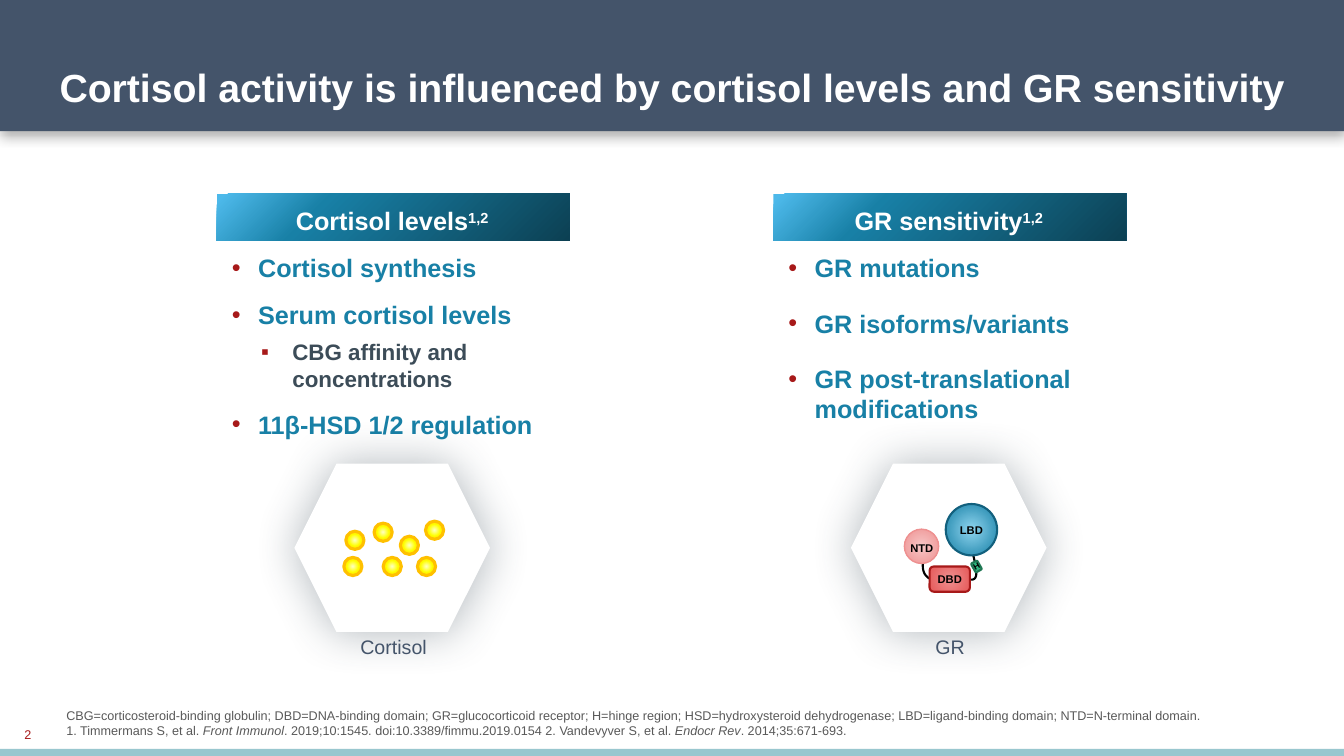
from dataclasses import dataclass

from lxml import etree
from pptx import Presentation
from pptx.dml.color import RGBColor
from pptx.enum import shapes, text
from pptx.oxml import ns
from pptx.util import Inches, Pt

FONT = "Arial"
SLATE = RGBColor(0x44, 0x54, 0x6A)
AQUA = RGBColor(0x99, 0xC7, 0xCF)
WHITE = RGBColor(0xFF, 0xFF, 0xFF)
BLACK = RGBColor(0x00, 0x00, 0x00)
RED = RGBColor(0xA7, 0x19, 0x19)
GRAY = RGBColor(0x59, 0x59, 0x59)
CHARCOAL = RGBColor(0x3C, 0x4C, 0x58)
SKY = RGBColor(0x4D, 0xB9, 0xEA)
TEAL = RGBColor(0x18, 0x80, 0xA6)
DEEP_TEAL = RGBColor(0x0C, 0x40, 0x53)
PALE_BLUE = RGBColor(0x8F, 0xD5, 0xEF)
DARK_TEAL = RGBColor(0x12, 0x60, 0x7D)
PALE_PINK = RGBColor(0xF7, 0xC8, 0xC8)
PINK = RGBColor(0xEE, 0x90, 0x90)
CORAL = RGBColor(0xE6, 0x59, 0x59)
GREEN = RGBColor(0x2F, 0xB7, 0x80)
DARK_GREEN = RGBColor(0x1F, 0x77, 0x53)
CREAM = RGBColor(0xFF, 0xFF, 0xBD)
YELLOW = RGBColor(0xFF, 0xFF, 0x00)
AMBER = RGBColor(0xFF, 0xC0, 0x00)

BAR_STOPS = [(2, SKY), (29, TEAL), (100, DEEP_TEAL)]
CORTISOL_STOPS = [(0, CREAM), (45, YELLOW), (96, AMBER)]


@dataclass
class Run:
    text: str
    italic: bool = False
    superscript: bool = False


@dataclass
class Bullet:
    text: str
    before: float = 12
    sub: bool = False


@dataclass
class Column:
    left: float
    heading: str
    bullets: list[Bullet]
    height: float
    caption: str
    caption_width: float


@dataclass
class Domain:
    kind: shapes.MSO_SHAPE
    box: tuple[float, float, float, float]
    fill: RGBColor | list
    line: RGBColor
    weight: float = 1.5
    label: str = ""
    size: float = 8
    rotation: float = 0


COLUMNS = [
    Column(2.15, "Cortisol levels", [
        Bullet("Cortisol synthesis"), Bullet("Serum cortisol levels"),
        Bullet("CBG affinity and concentrations", 6, True),
        Bullet("11β-HSD 1/2 regulation")], 2.44, "Cortisol", 0.87),
    Column(7.67, "GR sensitivity", [
        Bullet("GR mutations"), Bullet("GR isoforms/variants", 18),
        Bullet("GR post-translational modifications", 18)], 2.93, "GR", 0.5),
]
CORTISOL_SPOTS = [(3.43, 5.27), (3.8, 5.53), (3.41, 5.53), (4.22, 5.17),
                  (3.71, 5.19), (3.97, 5.32), (4.14, 5.53)]
DOMAINS = [
    Domain(shapes.MSO_SHAPE.OVAL, (9.38, 5, 0.51, 0.51),
           [(0, PALE_BLUE), (96, TEAL)], DARK_TEAL, label="LBD"),
    Domain(shapes.MSO_SHAPE.OVAL, (8.97, 5.25, 0.34, 0.34),
           [(0, PALE_PINK), (100, PINK)], PINK, 1),
    Domain(shapes.MSO_SHAPE.ROUNDED_RECTANGLE, (9.22, 5.62, 0.4, 0.25),
           [(0, PINK), (100, CORAL)], RED, label="DBD"),
    Domain(shapes.MSO_SHAPE.ROUNDED_RECTANGLE, (9.65, 5.57, 0.07, 0.1),
           GREEN, DARK_GREEN, label="H", size=6, rotation=330.6),
]


def sub_element(parent, tag: str, **attributes):
    names = {name: str(value) for name, value in attributes.items()}
    return etree.SubElement(parent, ns.qn(tag), names)


def write(frame, content: str | list[Run], *, size: float, color: RGBColor, bold=False,
          align=text.PP_ALIGN.LEFT, before: float = 0, spacing: float = 1,
          bullet: str = "", level: int = 0, margin: float = 0, hanging: float = 0) -> None:
    """Fill the frame's empty first paragraph, or add one after it."""
    first = frame.paragraphs[0]
    paragraph = frame.add_paragraph() if first.runs else first
    paragraph.alignment, paragraph.level = align, level
    paragraph.line_spacing, paragraph.space_before = spacing, Pt(before)
    properties = paragraph._p.get_or_add_pPr()
    properties.set("marL", str(Inches(margin)))
    properties.set("indent", str(-Inches(hanging)))
    if bullet:
        sub_element(sub_element(properties, "a:buClr"), "a:srgbClr", val=RED)
        sub_element(properties, "a:buFont", typeface=FONT)
        sub_element(properties, "a:buChar", char=bullet)
    else:
        sub_element(properties, "a:buNone")
    for part in [Run(content)] if isinstance(content, str) else content:
        run = paragraph.add_run()
        run.text = part.text
        font = run.font
        font.name, font.size, font.bold, font.italic = FONT, Pt(size), bold, part.italic
        font.color.rgb = color
        if part.superscript:
            font._element.set("baseline", "30000")


def set_gradient(shape, stops: list, angle: float | None = None) -> None:
    """Apply a linear gradient at the angle, or a radial one without it."""
    shape.fill.solid()
    solid = shape._element.spPr.find(ns.qn("a:solidFill"))
    gradient = etree.Element(ns.qn("a:gradFill"), rotWithShape="1")
    stop_list = sub_element(gradient, "a:gsLst")
    for position, color in stops:
        stop = sub_element(stop_list, "a:gs", pos=position * 1000)
        sub_element(stop, "a:srgbClr", val=color)
    if angle is None:
        circle = sub_element(gradient, "a:path", path="circle")
        sub_element(circle, "a:fillToRect", l=50000, t=50000, r=50000, b=50000)
    else:
        sub_element(gradient, "a:lin", ang=int(angle * 60000), scaled=0)
    solid.getparent().replace(solid, gradient)


def set_shadow(shape, color: RGBColor, alpha: int, blur: float, distance: float) -> None:
    effects = shape._element.spPr.find(ns.qn("a:effectLst"))
    shadow = sub_element(effects, "a:outerShdw", blurRad=Pt(blur), dist=Pt(distance),
                         dir=5400000, algn="ctr", rotWithShape=0)
    sub_element(sub_element(shadow, "a:srgbClr", val=color), "a:alpha", val=alpha * 1000)


def place(shape, left: float, top: float, width: float, height: float) -> None:
    shape.left, shape.top = Inches(left), Inches(top)
    shape.width, shape.height = Inches(width), Inches(height)


def add_shape(slide, kind, box, fill, line=None, weight: float = 1, angle=None):
    shape = slide.shapes.add_shape(kind, *map(Inches, box))
    shape.shadow.inherit = False
    if isinstance(fill, list):
        set_gradient(shape, fill, angle)
    else:
        shape.fill.solid()
        shape.fill.fore_color.rgb = fill
    if line is None:
        shape.line.fill.background()
    else:
        shape.line.color.rgb, shape.line.width = line, Pt(weight)
    return shape


def add_text_box(slide, box, wrap=True, anchor=text.MSO_ANCHOR.TOP):
    frame = slide.shapes.add_textbox(*map(Inches, box)).text_frame
    frame.word_wrap, frame.vertical_anchor = wrap, anchor
    return frame


def bring_forward(slide, placeholder, box, anchor):
    """Move the placeholder above everything drawn so far."""
    slide.shapes._spTree.append(placeholder._element)
    place(placeholder, *box)
    frame = placeholder.text_frame
    frame.auto_size, frame.word_wrap = text.MSO_AUTO_SIZE.NONE, True
    frame.vertical_anchor = anchor
    return frame


def add_column(slide, column: Column, body) -> None:
    left = column.left
    panel = add_shape(slide, shapes.MSO_SHAPE.SNIP_2_DIAG_RECTANGLE, (left, 1.92, 3.5, 4.64), WHITE)
    panel.adjustments[0], panel.adjustments[1] = 0.08, 0
    add_shape(slide, shapes.MSO_SHAPE.RECTANGLE, (left, 1.92, 3.5, 0.47), BAR_STOPS, angle=45)
    frame = bring_forward(slide, body, (left + 0.05, 1.99, 3.38, column.height), text.MSO_ANCHOR.TOP)
    write(frame, [Run(column.heading), Run("1,2", superscript=True)],
          size=18, color=WHITE, bold=True, align=text.PP_ALIGN.CENTER)
    for item in column.bullets:
        style = (dict(size=16, color=CHARCOAL, bullet="▪", level=1, margin=0.6, hanging=0.31)
                 if item.sub else
                 dict(size=18, color=TEAL, bullet="•", margin=0.26, hanging=0.26))
        write(frame, item.text, bold=True, before=item.before, **style)
    hexagon = add_shape(slide, shapes.MSO_SHAPE.HEXAGON, (left + 0.77, 4.6, 1.94, 1.67), WHITE)
    set_shadow(hexagon, CHARCOAL, 40, 33, 0)
    caption_left = left + 1.76 - column.caption_width / 2
    caption = add_text_box(slide, (caption_left, 6.25, column.caption_width, 0.34), wrap=False)
    write(caption, column.caption, size=14, color=SLATE)


def add_linker(slide, controls: list, rotation: float = 0) -> None:
    """Draw a cubic curve through its four control points."""
    steps = 16
    points = []
    for step in range(steps + 1):
        t = step / steps
        weights = ((1 - t) ** 3, 3 * t * (1 - t) ** 2, 3 * t * t * (1 - t), t ** 3)
        points.append(tuple(Inches(sum(w * c[axis] for w, c in zip(weights, controls)))
                            for axis in (0, 1)))
    builder = slide.shapes.build_freeform(*points[0])
    builder.add_line_segments(points[1:], close=False)
    linker = builder.convert_to_shape()
    linker.shadow.inherit = False
    linker.fill.background()
    linker.line.color.rgb, linker.line.width = BLACK, Pt(1.5)
    linker.rotation = rotation


def add_receptor(slide) -> None:
    add_linker(slide, [(9.17, 5.51), (9.14, 5.61), (9.14, 5.71), (9.24, 5.75)])
    add_linker(slide, [(9.62, 5.49), (9.73, 5.71), (9.73, 5.77), (9.59, 5.75)], 11.8)
    for domain in DOMAINS:
        shape = add_shape(slide, domain.kind, domain.box, domain.fill, domain.line, domain.weight)
        shape.rotation = domain.rotation
        if domain.label:
            frame = shape.text_frame
            frame.margin_left = frame.margin_right = 0
            frame.vertical_anchor = text.MSO_ANCHOR.MIDDLE
            write(frame, domain.label, size=domain.size, color=BLACK, bold=True,
                  align=text.PP_ALIGN.CENTER)
    write(add_text_box(slide, (8.93, 5.32, 0.43, 0.24), wrap=False), "NTD",
          size=8, color=BLACK, bold=True)


def main() -> None:
    presentation = Presentation()
    presentation.slide_width, presentation.slide_height = Inches(13.33), Inches(7.5)
    slide = presentation.slides.add_slide(presentation.slide_layouts[3])
    title, *bodies = slide.placeholders

    header = add_shape(slide, shapes.MSO_SHAPE.RECTANGLE, (0, -0.01, 13.33, 1.31), SLATE)
    set_shadow(header, BLACK, 30, 8, 4)
    add_shape(slide, shapes.MSO_SHAPE.RECTANGLE, (0, 7.43, 13.33, 0.1), AQUA)
    title_frame = bring_forward(slide, title, (0.49, 0.09, 12.53, 1.06), text.MSO_ANCHOR.BOTTOM)
    write(title_frame, "Cortisol activity is influenced by cortisol levels and GR sensitivity",
          size=28, color=WHITE, bold=True, spacing=0.9)

    number = add_text_box(slide, (0.01, 7.09, 0.4, 0.4), anchor=text.MSO_ANCHOR.MIDDLE)
    write(number, "2", size=9, color=RED, align=text.PP_ALIGN.RIGHT)
    notes = add_text_box(slide, (0.56, 6.8, 11.47, 0.57), anchor=text.MSO_ANCHOR.BOTTOM)
    write(notes, "CBG=corticosteroid-binding globulin; DBD=DNA-binding domain; "
          "GR=glucocorticoid receptor; H=hinge region; HSD=hydroxysteroid dehydrogenase; "
          "LBD=ligand-binding domain; NTD=N-terminal domain.", size=9, color=GRAY)
    write(notes, [Run("1. Timmermans S, et al. "), Run("Front Immunol", italic=True),
                  Run(". 2019;10:1545. doi:10.3389/fimmu.2019.0154 2. Vandevyver S, et al. "),
                  Run("Endocr Rev", italic=True), Run(". 2014;35:671-693.")],
          size=9, color=GRAY)

    for column, body in zip(COLUMNS, bodies):
        add_column(slide, column, body)
    for left, top in CORTISOL_SPOTS:
        add_shape(slide, shapes.MSO_SHAPE.OVAL, (left, top, 0.18, 0.18), CORTISOL_STOPS, AMBER, 2.25)
    add_receptor(slide)
    presentation.save("out.pptx")


if __name__ == "__main__":
    main()
